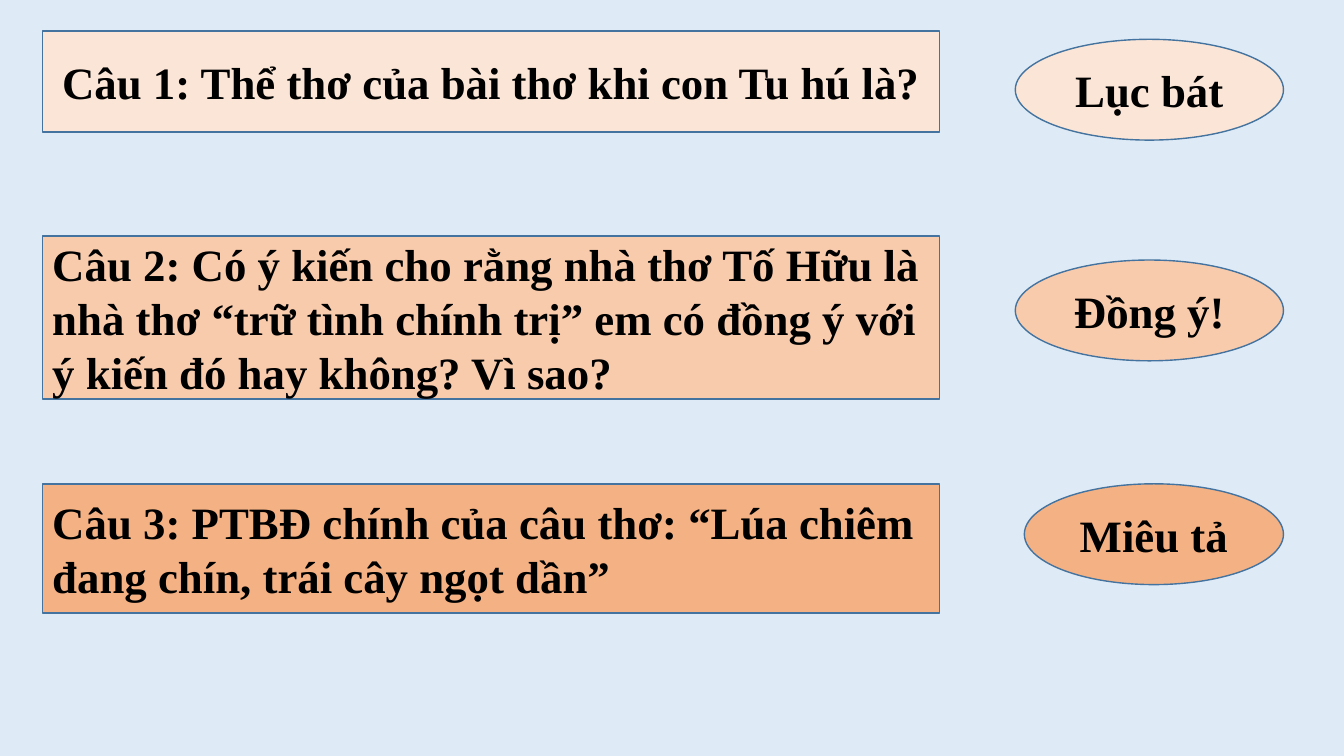
from pptx import Presentation
from pptx.dml.color import RGBColor
from pptx.enum.shapes import MSO_SHAPE
from pptx.enum.text import MSO_ANCHOR, PP_ALIGN
from pptx.util import Inches, Pt

RECTANGLE, ELLIPSE = MSO_SHAPE.RECTANGLE, MSO_SHAPE.OVAL
LEFT, CENTER = PP_ALIGN.LEFT, PP_ALIGN.CENTER
MIDDLE = MSO_ANCHOR.MIDDLE

SLIDE_WIDTH, SLIDE_HEIGHT = 13.33, 7.5
QUESTION_LEFT, QUESTION_RIGHT = 0.42, 9.32
ANSWER_RIGHT, ANSWER_HEIGHT = 12.73, 1

ROWS = [
    {"fill": "FBE5D6", "top": 0.31, "height": 1, "align": CENTER,
     "question": "Câu 1: Thể thơ của bài thơ khi con Tu hú là?",
     "answer": "Lục bát", "answer_offset": 0.08, "answer_width": 2.66},
    {"fill": "F8CBAD", "top": 2.34, "height": 1.62, "align": LEFT,
     "question": "Câu 2: Có ý kiến cho rằng nhà thơ Tố Hữu là nhà thơ “trữ tình "
                 "chính trị” em có đồng ý với ý kiến đó hay không? Vì sao?",
     "answer": "Đồng ý!", "answer_offset": 0.24, "answer_width": 2.66},
    {"fill": "F4B183", "top": 4.8, "height": 1.28, "align": LEFT,
     "question": "Câu 3: PTBĐ chính của câu thơ: “Lúa chiêm đang chín, "
                 "trái cây ngọt dần”",
     "answer": "Miêu tả", "answer_offset": 0, "answer_width": 2.57},
]


def paint(color_format, color):
    """Set a fill, line or font colour from a hex string."""
    color_format.rgb = RGBColor.from_string(color)


def add_label(page, kind, box, text, fill, align):
    """Add an outlined shape with bold text to the given box."""
    shape = page.shapes.add_shape(kind, *(Inches(length) for length in box))
    shape.shadow.inherit = False
    shape.fill.solid()
    paint(shape.fill.fore_color, fill)
    paint(shape.line.color, "43739E")
    shape.line.width = Pt(1)
    frame = shape.text_frame
    frame.word_wrap = True
    frame.vertical_anchor = MIDDLE
    frame.text = text
    para = frame.paragraphs[0]
    para.alignment = align
    font = para.runs[0].font
    font.name, font.size, font.bold = "Times New Roman", Pt(32), True
    paint(font.color, "000000")


def add_row(page, row):
    """Place a question and its answer in one row."""
    question_box = (QUESTION_LEFT, row["top"],
                    QUESTION_RIGHT - QUESTION_LEFT, row["height"])
    answer_box = (ANSWER_RIGHT - row["answer_width"],
                  row["top"] + row["answer_offset"],
                  row["answer_width"], ANSWER_HEIGHT)
    add_label(page, RECTANGLE, question_box, row["question"], row["fill"], row["align"])
    add_label(page, ELLIPSE, answer_box, row["answer"], row["fill"], CENTER)


def main():
    """Build and save the quiz slide."""
    deck = Presentation()
    deck.slide_width, deck.slide_height = Inches(SLIDE_WIDTH), Inches(SLIDE_HEIGHT)
    page = deck.slides.add_slide(deck.slide_layouts[6])
    page.background.fill.solid()
    paint(page.background.fill.fore_color, "DEEBF7")
    for row in ROWS:
        add_row(page, row)
    deck.save("out.pptx")


if __name__ == "__main__":
    main()
